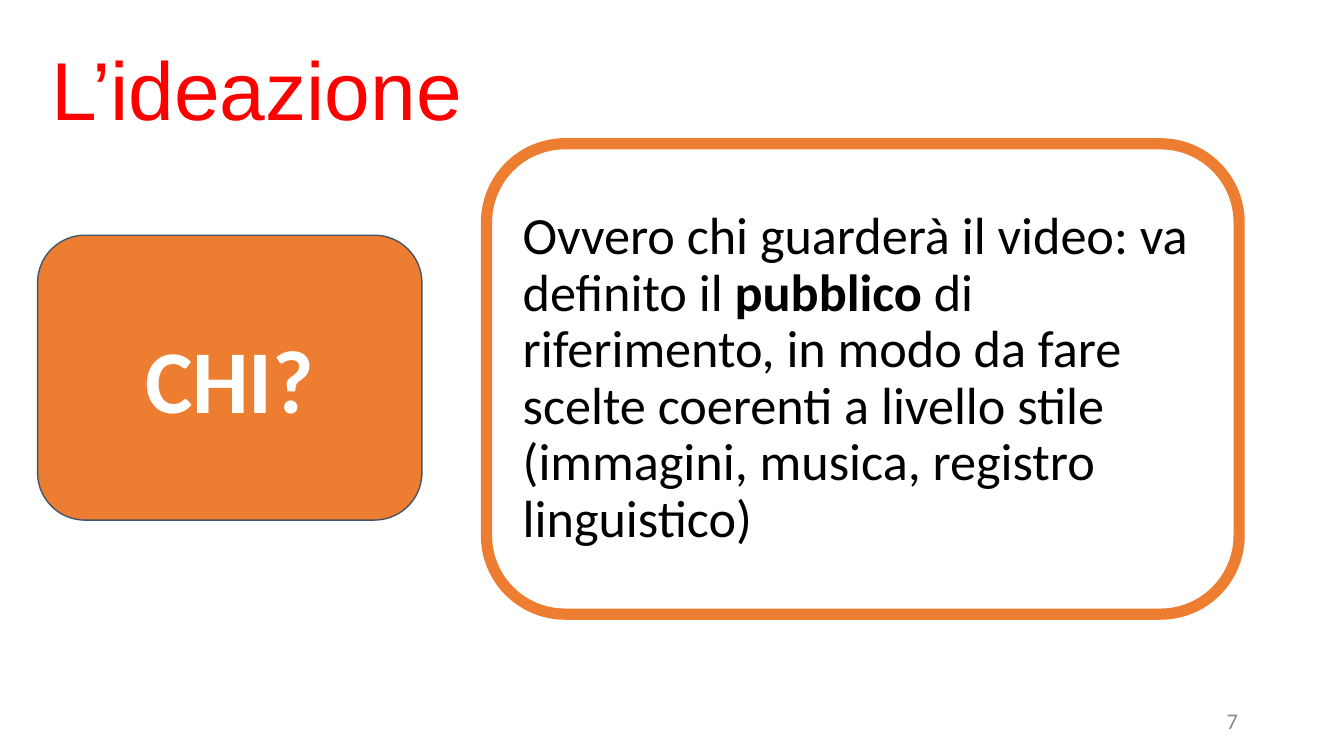
from dataclasses import dataclass

from pptx import Presentation
from pptx.dml.color import RGBColor
from pptx.enum.shapes import MSO_SHAPE as Shape
from pptx.enum.text import MSO_ANCHOR as Anchor, MSO_AUTO_SIZE as Fit, PP_ALIGN as Align
from pptx.util import Inches, Pt


@dataclass(frozen=True)
class Theme:
    head: str = "Arial"
    body: str = "Calibri"
    red: str = "FF0000"
    orange: str = "ED7D31"
    slate: str = "44546A"
    white: str = "FFFFFF"
    black: str = "000000"
    gray: str = "888888"
    title: int = 44
    label: int = 48
    text: int = 28
    page: int = 12


T = Theme()


def rgb(color):
    return RGBColor.from_string(color)


def place(shape, box):
    shape.left, shape.top, shape.width, shape.height = map(Inches, box)


def set_frame(shape, pad):
    """Centre the text vertically, wrap it and return its first paragraph."""
    frame = shape.text_frame
    frame.auto_size = Fit.NONE
    frame.word_wrap = True
    frame.vertical_anchor = Anchor.MIDDLE
    frame.margin_left = frame.margin_right = Inches(0.1)
    frame.margin_top = frame.margin_bottom = Inches(pad)
    return frame.paragraphs[0]


def add_run(para, text, size, color, font=T.body, bold=False):
    run = para.add_run()
    run.text = text
    run.font.name = font
    run.font.size = Pt(size)
    run.font.bold = bold
    run.font.color.rgb = rgb(color)


def add_card(slide, box, line, width, fill=None):
    """Add a rounded box and return its paragraph."""
    card = slide.shapes.add_shape(Shape.ROUNDED_RECTANGLE, *map(Inches, box))
    card.shadow.inherit = False
    card.adjustments[0] = 0.167
    if fill:
        card.fill.solid()
        card.fill.fore_color.rgb = rgb(fill)
    else:
        card.fill.background()
    card.line.color.rgb = rgb(line)
    card.line.width = Pt(width)
    return set_frame(card, 0.1)


def set_title(slide, box, text):
    title = slide.shapes.title
    place(title, box)
    para = set_frame(title, 0.05)
    para.alignment = Align.LEFT
    para.line_spacing = 0.9
    add_run(para, text, T.title, T.red, T.head)


def add_label(slide, box, text):
    para = add_card(slide, box, T.slate, 0.75, T.orange)
    para.alignment = Align.CENTER
    add_run(para, text, T.label, T.white, bold=True)


def add_answer(slide, box, parts):
    """Add the outlined box; parts are pairs of text and bold flag."""
    para = add_card(slide, box, T.orange, 6)
    para.alignment = Align.LEFT
    para.line_spacing = 0.9
    para.space_before = Pt(10)
    for text, bold in parts:
        add_run(para, text, T.text, T.black, bold=bold)


def add_page(slide, box, number):
    para = set_frame(slide.shapes.add_textbox(*map(Inches, box)), 0.05)
    para.alignment = Align.RIGHT
    add_run(para, number, T.page, T.gray)


def main():
    deck = Presentation()
    deck.slide_width, deck.slide_height = Inches(10), Inches(10 * 9 / 16)
    slide = deck.slides.add_slide(deck.slide_layouts[5])
    set_title(slide, (0.28, 0.15, 8.62, 1.09), "L’ideazione")
    add_page(slide, (7.06, 5.21, 2.25, 0.3), "7")
    add_label(slide, (0.28, 1.75, 2.86, 2.12), "CHI?")
    add_answer(slide, (3.62, 1.07, 5.6, 3.5), [
        ("Ovvero chi guarderà il video: va definito il ", False),
        ("pubblico ", True),
        ("di riferimento, in modo da fare scelte coerenti a livello stile "
         "(immagini, musica, registro linguistico)", False),
    ])
    deck.save("out.pptx")


if __name__ == "__main__":
    main()
